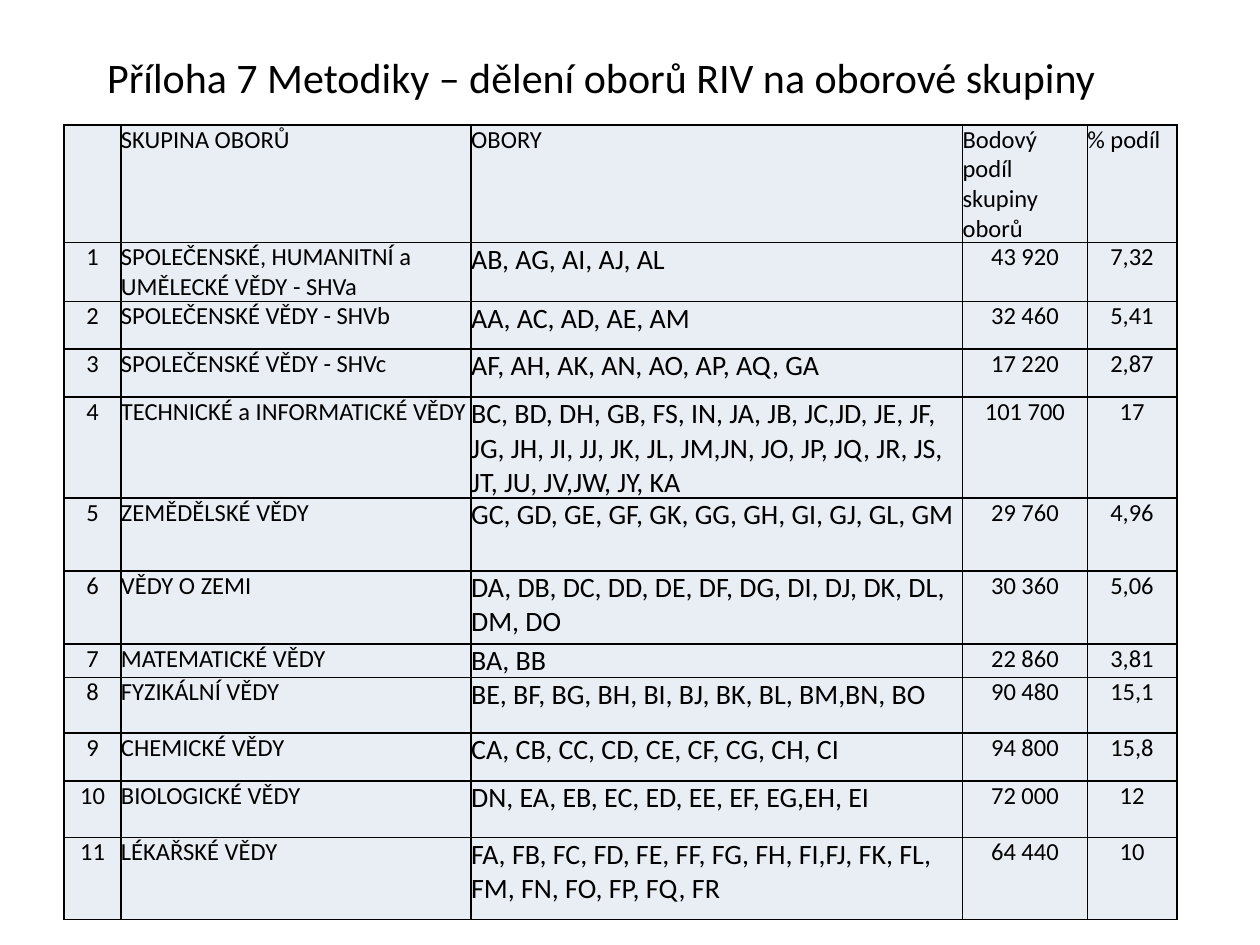
from typing import NamedTuple

from lxml import etree
from pptx import Presentation
from pptx.dml.color import RGBColor
from pptx.enum.text import MSO_ANCHOR, MSO_AUTO_SIZE, PP_ALIGN
from pptx.oxml.ns import qn
from pptx.util import Inches, Pt

LEFT, CENTER = PP_ALIGN.LEFT, PP_ALIGN.CENTER
MIDDLE = MSO_ANCHOR.MIDDLE
GROW = MSO_AUTO_SIZE.SHAPE_TO_FIT_TEXT

COLORS = {"text": "000000", "border": "000000", "cell": "E9EDF4"}
FONT = "Calibri"


class Group(NamedTuple):
    name: str
    fields: str
    points: str
    share: str
    height: float


class Column(NamedTuple):
    width: float
    size: int
    align: PP_ALIGN


TITLE = "Příloha 7 Metodiky – dělení oborů RIV na oborové skupiny"
HEADER = Group("SKUPINA OBORŮ", "OBORY", "Bodový podíl skupiny oborů", "% podíl", 0.72)
GROUPS = [
    Group("SPOLEČENSKÉ, HUMANITNÍ a UMĚLECKÉ VĚDY - SHVa", "AB, AG, AI, AJ, AL",
          "43 920", "7,32", 0.38),
    Group("SPOLEČENSKÉ VĚDY - SHVb", "AA, AC, AD, AE, AM", "32 460", "5,41", 0.38),
    Group("SPOLEČENSKÉ VĚDY - SHVc", "AF, AH, AK, AN, AO, AP, AQ, GA",
          "17 220", "2,87", 0.38),
    Group("TECHNICKÉ a INFORMATICKÉ VĚDY",
          "BC, BD, DH, GB, FS, IN, JA, JB, JC,JD, JE, JF, JG, JH, JI, JJ, JK, JL, "
          "JM,JN, JO, JP, JQ, JR, JS, JT, JU, JV,JW, JY, KA", "101 700", "17", 0.8),
    Group("ZEMĚDĚLSKÉ VĚDY", "GC, GD, GE, GF, GK, GG, GH, GI, GJ, GL, GM",
          "29 760", "4,96", 0.58),
    Group("VĚDY O ZEMI", "DA, DB, DC, DD, DE, DF, DG, DI, DJ, DK, DL, DM, DO",
          "30 360", "5,06", 0.58),
    Group("MATEMATICKÉ VĚDY", "BA, BB", "22 860", "3,81", 0.19),
    Group("FYZIKÁLNÍ VĚDY", "BE, BF, BG, BH, BI, BJ, BK, BL, BM,BN, BO",
          "90 480", "15,1", 0.44),
    Group("CHEMICKÉ VĚDY", "CA, CB, CC, CD, CE, CF, CG, CH, CI",
          "94 800", "15,8", 0.38),
    Group("BIOLOGICKÉ VĚDY", "DN, EA, EB, EC, ED, EE, EF, EG,EH, EI",
          "72 000", "12", 0.45),
    Group("LÉKAŘSKÉ VĚDY",
          "FA, FB, FC, FD, FE, FF, FG, FH, FI,FJ, FK, FL, FM, FN, FO, FP, FQ, FR",
          "64 440", "10", 0.65),
]
COLUMNS = [
    Column(0.45, 14, CENTER),
    Column(2.78, 14, LEFT),
    Column(3.9, 16, LEFT),
    Column(0.99, 14, CENTER),
    Column(0.71, 14, CENTER),
]


def write(tf, text: str, size: int, align: PP_ALIGN) -> None:
    p = tf.paragraphs[0]
    p.alignment = align
    r = p.add_run()
    r.text = text
    for name, value in {"name": FONT, "size": Pt(size)}.items():
        setattr(r.font, name, value)
    r.font.color.rgb = RGBColor.from_string(COLORS["text"])


def add_borders(cell) -> None:
    tc_pr = cell._tc.get_or_add_tcPr()
    for i, side in enumerate(("lnL", "lnR", "lnT", "lnB")):
        ln = etree.Element(qn(f"a:{side}"), w=str(Pt(1)))
        fill = etree.SubElement(ln, qn("a:solidFill"))
        etree.SubElement(fill, qn("a:srgbClr"), val=COLORS["border"])
        tc_pr.insert(i, ln)


def fill_cell(cell, text: str, size: int, align: PP_ALIGN) -> None:
    for side in ("left", "right", "top", "bottom"):
        setattr(cell, f"margin_{side}", 0)
    cell.fill.solid()
    cell.fill.fore_color.rgb = RGBColor.from_string(COLORS["cell"])
    add_borders(cell)
    if text:
        write(cell.text_frame, text, size, align)


def add_title(s) -> None:
    sp = s.shapes.title
    box = {"left": 0.75, "top": 0.36, "width": 8.66, "height": 0.5}
    for name, value in box.items():
        setattr(sp, name, Inches(value))
    tf = sp.text_frame
    for name, value in {"word_wrap": True, "auto_size": GROW, "vertical_anchor": MIDDLE}.items():
        setattr(tf, name, value)
    write(tf, TITLE, 24, LEFT)


def add_groups_table(s) -> None:
    rows = [HEADER, *GROUPS]
    height = Inches(6.32)
    frame = s.shapes.add_table(len(rows), len(COLUMNS), Inches(0.51), Inches(0.99),
                               Inches(8.82), height)
    table = frame.table
    for i, column in enumerate(COLUMNS):
        table.columns[i].width = Inches(column.width)
    for i, group in enumerate(rows):
        table.rows[i].height = Inches(group.height)
        texts = (str(i) if i else "", group.name, group.fields, group.points, group.share)
        for j, (text, column) in enumerate(zip(texts, COLUMNS)):
            size, align = (column.size, column.align) if i else (14, LEFT)
            fill_cell(table.cell(i, j), text, size, align)
    frame.height = height


def main() -> None:
    prs = Presentation()
    prs.slide_width, prs.slide_height = Inches(10), Inches(7.5)
    s = prs.slides.add_slide(prs.slide_layouts[5])
    add_title(s)
    add_groups_table(s)
    prs.save("out.pptx")


if __name__ == "__main__":
    main()
